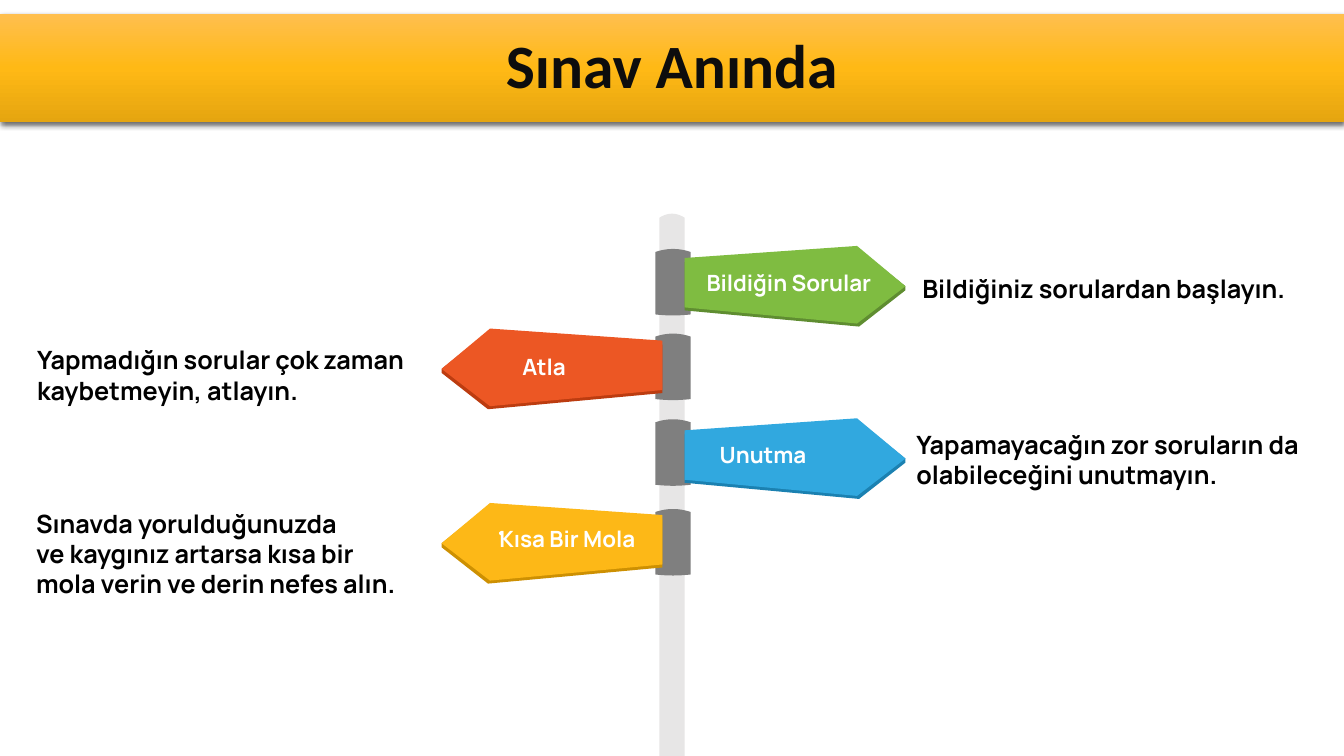
from dataclasses import dataclass

import lxml.etree
import pptx
import pptx.dml.color
import pptx.enum.shapes
import pptx.enum.text
import pptx.oxml
import pptx.oxml.ns
import pptx.shapes.autoshape
import pptx.shapes.shapetree
import pptx.slide
import pptx.util

Inches = pptx.util.Inches
ALIGN = pptx.enum.text.PP_ALIGN
Point = tuple[float, float]

COLORS = {
    "pole": "E7E6E6", "sleeve": "7F7F7F", "text": "000000", "white": "FFFFFF",
    "title": "0D0D0D", "banner_top": "FFBF4E", "banner_mid": "FFB915", "banner_end": "E5A510",
    "green": "7FBC41", "green_edge": "5F8D31", "red": "EC5724", "red_edge": "BC3C10",
    "blue": "31A8DF", "blue_edge": "1B81B1", "yellow": "FDB817", "yellow_edge": "CD9002",
}

# Sign outlines: distance from the post, distance below the top of the sign
FACE = [(0, 0.12), (1.71, 0), (2.19, 0.4), (1.71, 0.77), (0, 0.61)]
EDGE = [(0, 0.16), (1.73, 0.03), (2.19, 0.4), (2.19, 0.44), (1.73, 0.8), (0, 0.64)]
RIGHT_BASE, LEFT_BASE = 6.79, 6.57
ARC_STEPS = 12


@dataclass(frozen=True)
class Box:
    left: float
    top: float
    width: float
    height: float


@dataclass(frozen=True)
class Sign:
    color: str
    points_right: bool
    top: float
    sleeve_top: float
    label: str
    label_box: Box
    advice: str
    advice_box: Box
    advice_wraps: bool


SIGNS = [
    Sign("green", True, 2.44, 2.47, "Bildiğin Sorular", Box(6.91, 2.62, 1.86, 0.37),
         "Bildiğiniz sorulardan başlayın.", Box(9.05, 2.66, 3.94, 0.4), True),
    Sign("red", False, 3.26, 3.31, "Atla", Box(5.07, 3.45, 0.64, 0.37),
         "Yapmadığın sorular çok zaman\nkaybetmeyin, atlayın.",
         Box(0.27, 3.37, 3.99, 0.71), False),
    Sign("blue", True, 4.15, 4.16, "Unutma", Box(7.04, 4.33, 1.07, 0.37),
         "Yapamayacağın zor soruların da\nolabileceğini unutmayın.",
         Box(8.99, 4.21, 4.14, 0.71), False),
    Sign("yellow", False, 4.99, 5.05, "Kısa Bir Mola", Box(4.81, 5.16, 1.59, 0.37),
         "Sınavda yorulduğunuzda\nve kaygınız artarsa kısa bir\nmola verin ve derin nefes alın.",
         Box(0.26, 4.99, 4.03, 1.01), True),
]
Shapes = pptx.shapes.shapetree.SlideShapes | pptx.shapes.shapetree.GroupShapes


def rgb(name: str) -> pptx.dml.color.RGBColor:
    return pptx.dml.color.RGBColor.from_string(COLORS[name])


def paint(s: pptx.shapes.autoshape.Shape, color: str) -> None:
    s.fill.solid()
    s.fill.fore_color.rgb = rgb(color)
    s.line.fill.background()
    s.shadow.inherit = False


def add_outline(shapes: Shapes, points: list[Point], color: str) -> None:
    start, *rest = [(Inches(x), Inches(y)) for x, y in points]
    builder = shapes.build_freeform(*start)
    builder.add_line_segments(rest, close=True)
    paint(builder.convert_to_shape(), color)


def add_tube(shapes: Shapes, box: Box, top_bulge: float, bottom_bulge: float, color: str) -> None:
    """Draw an upright tube whose curved ends stay inside the box vertically."""
    steps = [i / ARC_STEPS for i in range(ARC_STEPS + 1)]
    upper, lower = [], []
    for t in steps:
        x, dip = box.left + t * box.width, (2 * t - 1) ** 2
        upper.append((x, box.top + top_bulge * dip))
        lower.append((x, box.top + box.height - bottom_bulge * dip))
    add_outline(shapes, upper + lower[::-1], color)


def add_text(shapes: Shapes, box: Box, text: str, size: int, color: str,
             wrap: bool, align: ALIGN = ALIGN.LEFT) -> None:
    s = shapes.add_textbox(*map(Inches, (box.left, box.top, box.width, box.height)))
    tf = s.text_frame
    tf.text = text
    tf.word_wrap = wrap
    tf.auto_size = pptx.enum.text.MSO_AUTO_SIZE.SHAPE_TO_FIT_TEXT
    for p in tf.paragraphs:
        p.alignment = align
        for r in p.runs:
            r.font.name = "Manrope"
            r.font.size = pptx.util.Pt(size)
            r.font.bold = True
            r.font.color.rgb = rgb(color)


def add_sign(slide: pptx.slide.Slide, sign: Sign) -> None:
    shapes = slide.shapes.add_group_shape().shapes
    add_tube(shapes, Box(6.5, sign.sleeve_top, 0.35, 0.66), 0.03, 0.01, "sleeve")
    base, direction = (RIGHT_BASE, 1) if sign.points_right else (LEFT_BASE, -1)
    for outline, color in ((EDGE, f"{sign.color}_edge"), (FACE, sign.color)):
        points = [(base + direction * x, sign.top + y) for x, y in outline]
        add_outline(shapes, points, color)
    align = ALIGN.LEFT if sign.points_right else ALIGN.RIGHT
    add_text(shapes, sign.label_box, sign.label, 16, "white", False, align)
    add_text(slide.shapes, sign.advice_box, sign.advice, 18, "text", sign.advice_wraps)


def add_banner_effects(s: pptx.shapes.autoshape.Shape) -> None:
    """Give the banner its three-stop gradient and soft lower shadow."""
    stops = "".join(
        f'<a:gs pos="{pos * 1000}"><a:srgbClr val="{COLORS[name]}"/></a:gs>'
        for pos, name in ((0, "banner_top"), (50, "banner_mid"), (100, "banner_end")))
    ns = pptx.oxml.ns.nsdecls("a")
    gradient = (f'<a:gradFill {ns} rotWithShape="1"><a:gsLst>{stops}</a:gsLst>'
                '<a:lin ang="5400000" scaled="0"/></a:gradFill>')
    shadow = (f'<a:effectLst {ns}><a:outerShdw blurRad="{pptx.util.Pt(4.5)}" '
              f'dist="{pptx.util.Pt(1.5)}" dir="5400000" algn="ctr" rotWithShape="0">'
              f'<a:srgbClr val="{COLORS["text"]}"><a:alpha val="63000"/></a:srgbClr>'
              '</a:outerShdw></a:effectLst>')
    for xml in (gradient, shadow):
        s.element.spPr.append(pptx.oxml.parse_xml(xml))


def add_title(slide: pptx.slide.Slide) -> None:
    s = slide.shapes.title
    s.left, s.top, s.width, s.height = map(Inches, (0, 0.14, 13.33, 1.07))
    add_banner_effects(s)
    tf = s.text_frame
    tf.text = "Sınav Anında"
    tf.vertical_anchor = pptx.enum.text.MSO_ANCHOR.MIDDLE
    p = tf.paragraphs[0]
    p.alignment = ALIGN.CENTER
    p.line_spacing = 0.9
    font = p.runs[0].font
    font.name, font.size, font.bold = "Calibri", pptx.util.Pt(44), True
    font.color.rgb = rgb("title")


def main() -> None:
    prs = pptx.Presentation()
    prs.slide_width, prs.slide_height = Inches(13.33), Inches(7.5)
    slide = prs.slides.add_slide(prs.slide_layouts.get_by_name("Title Only"))
    add_title(slide)
    add_tube(slide.shapes, Box(6.54, 2.12, 0.25, 5.59), 0.04, 0.02, "pole")
    for sign in SIGNS:
        add_sign(slide, sign)
    dot = slide.shapes.add_shape(pptx.enum.shapes.MSO_SHAPE.OVAL,
                                 *map(Inches, (4.95, 5.27, 0.04, 0.04)))
    paint(dot, "white")
    prs.save("out.pptx")


if __name__ == "__main__":
    main()
